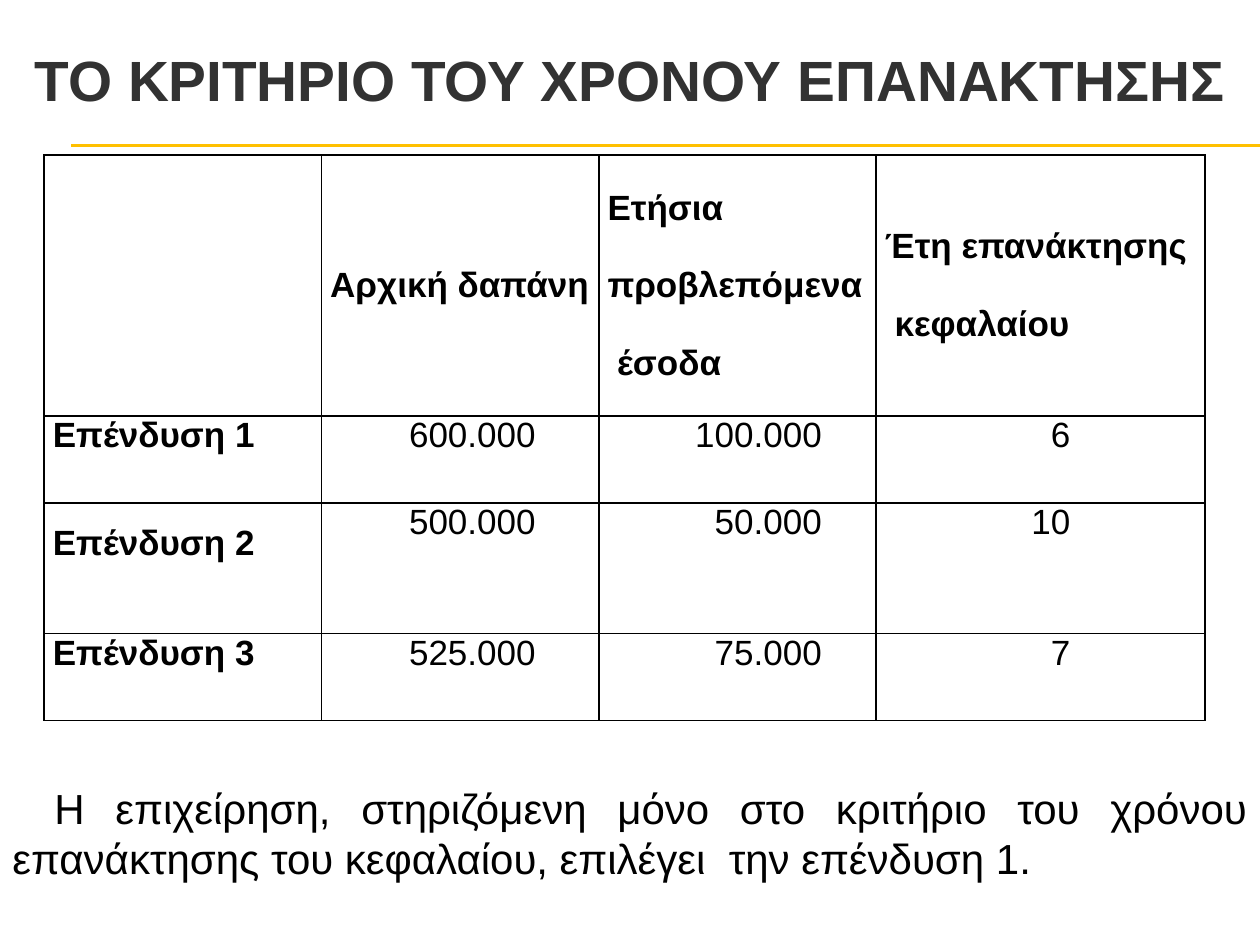
"""Build a slide comparing three investments by payback period."""
import pptx
import pptx.dml.color
import pptx.enum.text
import pptx.oxml
import pptx.oxml.ns
import pptx.util

Pt = pptx.util.Pt
ALIGN = pptx.enum.text.PP_ALIGN
MIDDLE = pptx.enum.text.MSO_ANCHOR.MIDDLE
NAMESPACE = pptx.oxml.ns.nsdecls("a")
COLORS = {"title": "323232", "text": "000000", "rule": "FFC000"}


def set_font(para, size, color, bold=False):
    para.font.name = "Arial"
    para.font.size = Pt(size)
    para.font.bold = bold
    para.font.color.rgb = pptx.dml.color.RGBColor.from_string(COLORS[color])


def add_borders(cell):
    properties = cell._tc.get_or_add_tcPr()
    for position, side in enumerate(("lnL", "lnR", "lnT", "lnB")):
        properties.insert(position, pptx.oxml.parse_xml(
            f'<a:{side} {NAMESPACE} w="12700"><a:solidFill>'
            f'<a:srgbClr val="{COLORS["text"]}"/></a:solidFill></a:{side}>'))


deck = pptx.Presentation()
deck.slide_width = Pt(720)
deck.slide_height = Pt(540)
page = deck.slides.add_slide(deck.slide_layouts[5])

for y in (82.8, 83.5):
    rule = page.shapes.add_connector(
        pptx.enum.shapes.MSO_CONNECTOR.STRAIGHT, Pt(40.5), Pt(y), Pt(720), Pt(y))
    rule.line.width = Pt(0.75)
    rule.line.color.rgb = pptx.dml.color.RGBColor.from_string(COLORS["rule"])
    rule._element.spPr.append(pptx.oxml.parse_xml(f"<a:effectLst {NAMESPACE}/>"))

title = page.shapes.title
title.left, title.top, title.width, title.height = Pt(0), Pt(0), Pt(720), Pt(90)
title.text_frame.text = "ΤΟ ΚΡΙΤΗΡΙΟ ΤΟΥ ΧΡΟΝΟΥ ΕΠΑΝΑΚΤΗΣΗΣ"
title.text_frame.auto_size = pptx.enum.text.MSO_AUTO_SIZE.NONE
title.text_frame.vertical_anchor = MIDDLE
title.text_frame.paragraphs[0].alignment = ALIGN.CENTER
set_font(title.text_frame.paragraphs[0], 32.4, "title", bold=True)

rows = [
    ("", "Αρχική δαπάνη", "Ετήσια\nπροβλεπόμενα\nέσοδα", "Έτη επανάκτησης\nκεφαλαίου"),
    ("Επένδυση 1", "600.000", "100.000", "6"),
    ("Επένδυση 2", "500.000", "50.000", "10"),
    ("Επένδυση 3", "525.000", "75.000", "7"),
]
column_widths = (158.5, 158.5, 158.5, 188)
row_heights = (149, 49.7, 74.8, 49.7)
right_margins = (5, 36, 31, 77)

table = page.shapes.add_table(
    len(rows), len(column_widths), Pt(25.2), Pt(88.6),
    Pt(sum(column_widths)), Pt(sum(row_heights))).table
table.first_row = False
table.horz_banding = False
for column, width in zip(table.columns, column_widths):
    column.width = Pt(width)

for row_index, values in enumerate(rows):
    table.rows[row_index].height = Pt(row_heights[row_index])
    is_header = row_index == 0
    for column_index, value in enumerate(values):
        cell = table.cell(row_index, column_index)
        is_number = not is_header and column_index > 0
        cell.fill.background()
        add_borders(cell)
        cell.margin_left = cell.margin_right = Pt(5)
        cell.margin_top = cell.margin_bottom = Pt(0)
        cell.text = value
        if is_header:
            cell.vertical_anchor = MIDDLE
        if is_number:
            cell.margin_right = Pt(right_margins[column_index])
        for para in cell.text_frame.paragraphs:
            set_font(para, 20, "text", bold=not is_number)
            para.alignment = ALIGN.RIGHT if is_number else ALIGN.LEFT
        for para in cell.text_frame.paragraphs[1:]:
            para.space_before = Pt(22)
        if len(cell.text_frame.paragraphs) > 1:
            para._p.get_or_add_pPr().set("marL", str(Pt(5.5)))

table.cell(2, 0).margin_top = Pt(12)

box = page.shapes.add_textbox(Pt(0), Pt(443), Pt(720), Pt(65.5))
box.text_frame.word_wrap = True
box.text_frame.vertical_anchor = MIDDLE
box.text_frame.text = (
    "Η επιχείρηση, στηριζόμενη μόνο στο κριτήριο του χρόνου "
    "επανάκτησης του κεφαλαίου, επιλέγει  την επένδυση 1.")
para = box.text_frame.paragraphs[0]
para.alignment = ALIGN.JUSTIFY
para._p.get_or_add_pPr().set("indent", str(Pt(24)))
set_font(para, 24, "text")

deck.save("out.pptx")
